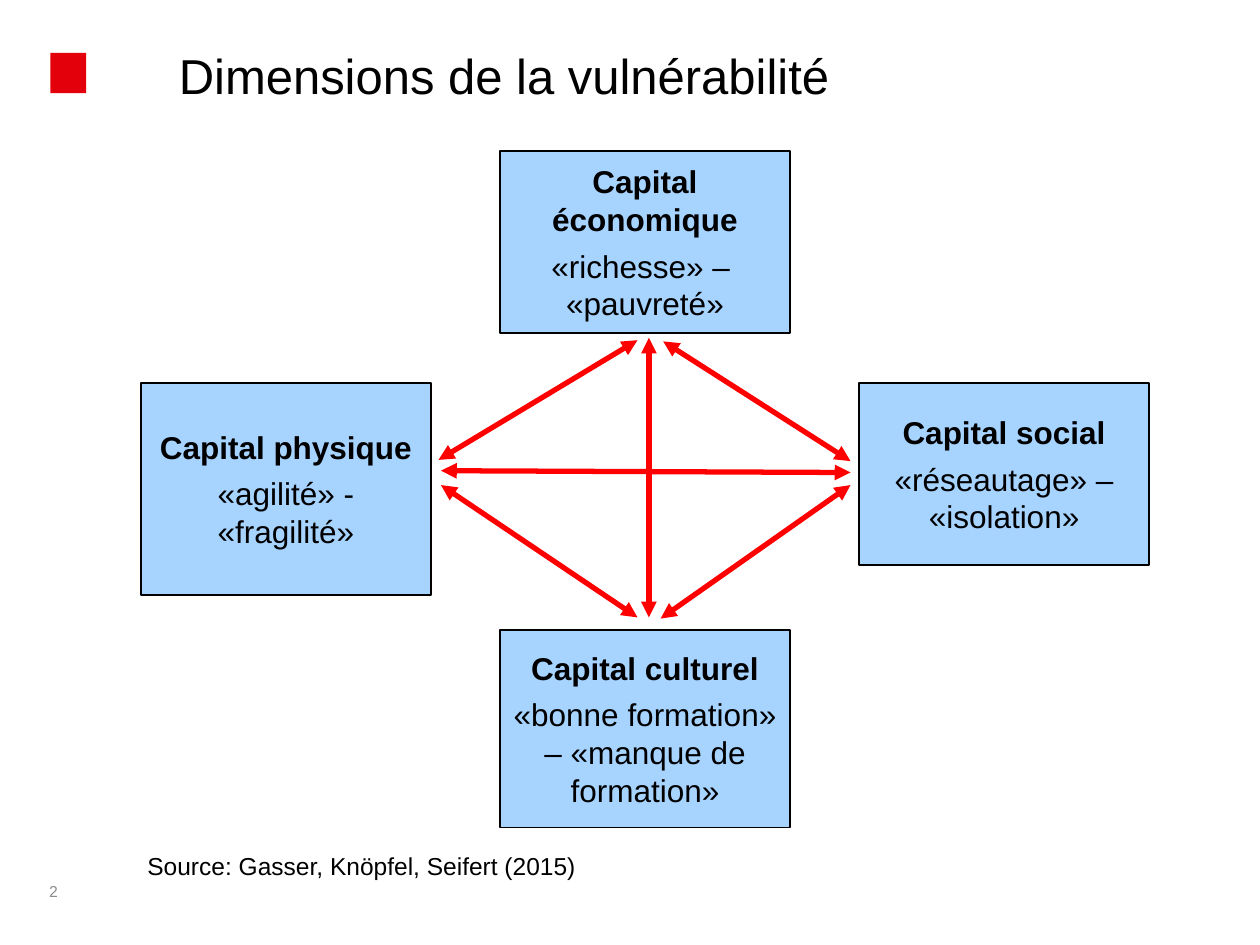
from dataclasses import dataclass

import pptx
import pptx.dml.color
import pptx.enum.shapes
import pptx.enum.text
import pptx.oxml
import pptx.oxml.ns
import pptx.presentation
import pptx.slide
import pptx.text.text
import pptx.util

Pt = pptx.util.Pt
RGBColor = pptx.dml.color.RGBColor
Align = pptx.enum.text.PP_ALIGN
Anchor = pptx.enum.text.MSO_ANCHOR
ShapeType = pptx.enum.shapes.MSO_SHAPE


@dataclass(frozen=True)
class Theme:
    font: str = "Arial"
    text: RGBColor = RGBColor(0x00, 0x00, 0x00)
    muted: RGBColor = RGBColor(0x8C, 0x8C, 0x8C)
    box: RGBColor = RGBColor(0xA7, 0xD3, 0xFF)
    arrow: RGBColor = RGBColor(0xFF, 0x00, 0x00)
    emblem: RGBColor = RGBColor(0xE3, 0x00, 0x0B)
    title_size: float = 28
    box_size: float = 18
    source_size: float = 14
    number_size: float = 9


@dataclass(frozen=True)
class Capital:
    name: str
    range: str
    left: float
    top: float
    height: float


@dataclass(frozen=True)
class Arrow:
    start: tuple[float, float]
    end: tuple[float, float]


@dataclass(frozen=True)
class Label:
    text: str
    left: float
    top: float
    width: float
    height: float
    size: float
    color: RGBColor
    anchor: Anchor = Anchor.TOP
    line_spacing: float | pptx.util.Length | None = None
    space_before: float = 0


THEME = Theme()
BOX_WIDTH = 165.6
MIDDLE_LEFT = 285.8
SIDE_OFFSET = 205.2
SIDE_TOP = 218.9

CAPITALS = [
    Capital("Capital économique", "«richesse» – \v«pauvreté»", MIDDLE_LEFT, 86.5, 103.8),
    Capital("Capital social", "«réseautage» – «isolation»",
            MIDDLE_LEFT + SIDE_OFFSET, SIDE_TOP, 104),
    Capital("Capital culturel", "«bonne formation» – «manque de formation»",
            MIDDLE_LEFT, 360, 113),
    Capital("Capital physique", "«agilité» - «fragilité»",
            MIDDLE_LEFT - SIDE_OFFSET, SIDE_TOP, 121),
]

ARROWS = [
    Arrow((250.6, 262.8), (364.3, 194.4)),
    Arrow((486, 263.5), (379, 195.1)),
    Arrow((252, 269), (486, 270)),
    Arrow((370.8, 193), (370.8, 352.8)),
    Arrow((364.3, 352.8), (252, 277.2)),
    Arrow((377.5, 353.5), (486, 277.2)),
]

LABELS = [
    Label("Dimensions de la vulnérabilité", 102.2, 29.5, 589.7, 70.6,
          THEME.title_size, THEME.text, line_spacing=0.9),
    Label("2", 28.1, 500.4, 42.5, 14.4, THEME.number_size, THEME.muted, Anchor.BOTTOM),
    Label("Source: Gasser, Knöpfel, Seifert (2015)", 84.2, 481, 589.7, 26.6,
          THEME.source_size, THEME.text, line_spacing=Pt(22), space_before=7.5),
]


def format_runs(paragraph: pptx.text.text._Paragraph, size: float,
                color: RGBColor, bold: bool = False) -> None:
    for run in paragraph.runs:
        run.font.name = THEME.font
        run.font.size = Pt(size)
        run.font.color.rgb = color
        run.font.bold = bold


def add_label(slide: pptx.slide.Slide, label: Label) -> None:
    shape = slide.shapes.add_textbox(Pt(label.left), Pt(label.top),
                                     Pt(label.width), Pt(label.height))
    frame = shape.text_frame
    frame.word_wrap = True
    frame.vertical_anchor = label.anchor
    frame.margin_left = frame.margin_right = frame.margin_top = frame.margin_bottom = 0
    frame.text = label.text
    paragraph = frame.paragraphs[0]
    paragraph.space_before = Pt(label.space_before)
    if label.line_spacing is not None:
        paragraph.line_spacing = label.line_spacing
    format_runs(paragraph, label.size, label.color)


def add_capital(slide: pptx.slide.Slide, capital: Capital) -> None:
    shape = slide.shapes.add_shape(ShapeType.RECTANGLE, Pt(capital.left), Pt(capital.top),
                                   Pt(BOX_WIDTH), Pt(capital.height))
    shape.shadow.inherit = False
    shape.fill.solid()
    shape.fill.fore_color.rgb = THEME.box
    shape.line.color.rgb = THEME.text
    shape.line.width = Pt(1)
    frame = shape.text_frame
    frame.word_wrap = True
    frame.vertical_anchor = Anchor.MIDDLE
    heading = frame.paragraphs[0]
    heading.text = capital.name
    detail = frame.add_paragraph()
    detail.text = capital.range
    detail.space_before = Pt(5)
    for paragraph in (heading, detail):
        paragraph.alignment = Align.CENTER
        format_runs(paragraph, THEME.box_size, THEME.text, bold=paragraph is heading)


def add_arrow(slide: pptx.slide.Slide, arrow: Arrow) -> None:
    """Draw a straight line with an arrowhead at both ends."""
    connector = slide.shapes.add_connector(
        pptx.enum.shapes.MSO_CONNECTOR.STRAIGHT,
        *(Pt(value) for value in arrow.start + arrow.end))
    connector.line.color.rgb = THEME.arrow
    connector.line.width = Pt(3)
    line = connector.line._get_or_add_ln()
    namespace = pptx.oxml.ns.nsdecls("a")
    for end in ("headEnd", "tailEnd"):
        line.append(pptx.oxml.parse_xml(f'<a:{end} {namespace} type="triangle"/>'))
    connector._element.spPr.append(pptx.oxml.parse_xml(f"<a:effectLst {namespace}/>"))


def add_emblem(slide: pptx.slide.Slide) -> None:
    shape = slide.shapes.add_shape(ShapeType.RECTANGLE, Pt(28.8), Pt(30.2), Pt(20.5), Pt(23))
    shape.shadow.inherit = False
    shape.fill.solid()
    shape.fill.fore_color.rgb = THEME.emblem
    shape.line.fill.background()


def build() -> pptx.presentation.Presentation:
    presentation = pptx.Presentation()
    presentation.slide_width = Pt(720)
    presentation.slide_height = Pt(540)
    slide = presentation.slides.add_slide(presentation.slide_layouts[6])
    add_emblem(slide)
    for capital in CAPITALS:
        add_capital(slide, capital)
    for arrow in ARROWS:
        add_arrow(slide, arrow)
    for label in LABELS:
        add_label(slide, label)
    return presentation


if __name__ == "__main__":
    build().save("out.pptx")
